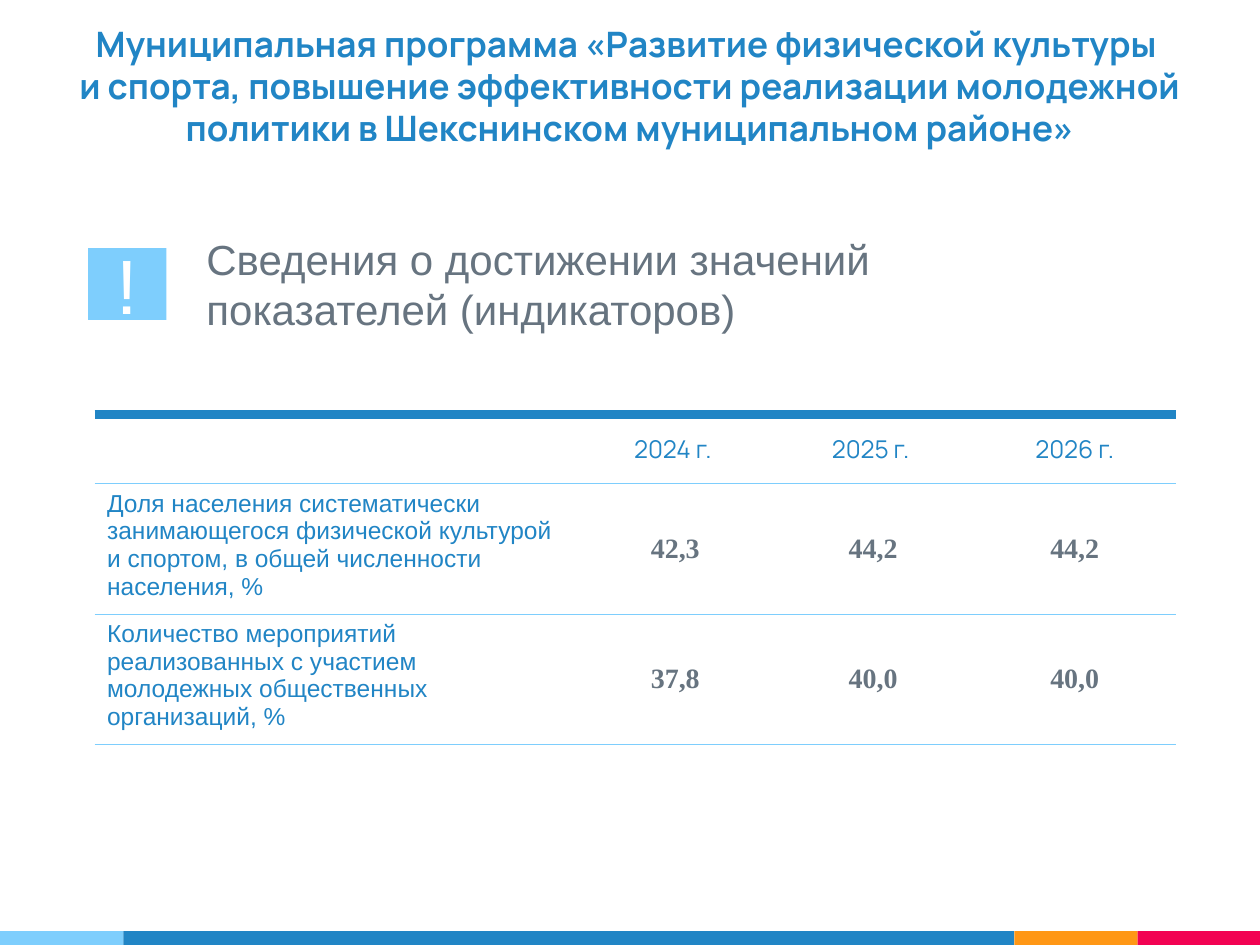
"""Build the slide on the sports and youth programme indicators."""
from lxml import etree
from pptx import Presentation
from pptx import util as u
from pptx.dml.color import RGBColor
from pptx.enum import shapes, text
from pptx.oxml.ns import qn

BLUE = RGBColor(0x21, 0x85, 0xC5)
SKY = RGBColor(0x7E, 0xCE, 0xFD)
ORANGE = RGBColor(0xFF, 0x97, 0x15)
RED = RGBColor(0xF2, 0x02, 0x53)
GRAY = RGBColor(0x67, 0x74, 0x80)
WHITE = RGBColor(0xFF, 0xFF, 0xFF)

TITLE = ("Муниципальная программа «Развитие физической культуры \n"
         "и спорта, повышение эффективности реализации молодежной "
         "политики в Шекснинском муниципальном районе»")
SUBTITLE = "Сведения о достижении значений показателей (индикаторов)"
ROWS = [
    ("", "2024 г. ", "2025 г. ", "2026 г."),
    ("Доля населения систематически занимающегося физической культурой "
     "и спортом, в общей численности населения, %", "42,3", "44,2", "44,2"),
    ("Количество мероприятий реализованных с участием молодежных "
     "общественных организаций, %", "37,8", "40,0", "40,0"),
]
COLUMN_WIDTHS = (3.84, 1.54, 1.6, 1.6)
ROW_HEIGHTS = (0.55, 0.98, 0.98)
FOOTER = [(SKY, 0.98), (BLUE, 7.07), (ORANGE, 0.98), (RED, 0.97)]
FOOTER_TOP, FOOTER_HEIGHT = 7.39, 0.11

HEADER_FORMAT = dict(font="Manrope", size=14, color=BLUE, align=text.PP_ALIGN.CENTER)
LABEL_FORMAT = dict(font="Arial", size=14, color=BLUE)
VALUE_FORMAT = dict(font="Times New Roman", size=16, color=GRAY, bold=True,
                    align=text.PP_ALIGN.CENTER)


def write(frame, content, font, size, color, bold=False, align=text.PP_ALIGN.LEFT):
    frame.word_wrap = True
    paragraph = frame.paragraphs[0]
    paragraph.text = content
    paragraph.alignment = align
    for run in paragraph.runs:
        run.font.name = font
        run.font.size = u.Pt(size)
        run.font.bold = bold
        run.font.color.rgb = color


def add_text(slide, box, content, anchor=text.MSO_ANCHOR.TOP, **style):
    frame = slide.shapes.add_textbox(*map(u.Inches, box)).text_frame
    frame.vertical_anchor = anchor
    write(frame, content, **style)
    return frame


def add_block(slide, box, color):
    shape = slide.shapes.add_shape(shapes.MSO_SHAPE.RECTANGLE, *map(u.Inches, box))
    shape.shadow.inherit = False
    shape.fill.solid()
    shape.fill.fore_color.rgb = color
    shape.line.fill.background()
    return shape


def set_borders(cell, top, bottom):
    properties = cell._tc.get_or_add_tcPr()
    borders = [("lnL", None), ("lnR", None), ("lnT", top), ("lnB", bottom)]
    for position, (name, border) in enumerate(borders):
        line = etree.Element(qn(f"a:{name}"))
        properties.insert(position, line)
        if border is None:
            etree.SubElement(line, qn("a:noFill"))
        else:
            color, width = border
            line.set("w", str(u.Pt(width)))
            fill = etree.SubElement(line, qn("a:solidFill"))
            etree.SubElement(fill, qn("a:srgbClr"), val=str(color))


def add_indicators(slide, left, top):
    table = slide.shapes.add_table(
        len(ROWS), len(COLUMN_WIDTHS), u.Inches(left), u.Inches(top),
        u.Inches(sum(COLUMN_WIDTHS)), u.Inches(sum(ROW_HEIGHTS))).table
    table.first_row = table.horz_banding = False
    for column, width in zip(table.columns, COLUMN_WIDTHS):
        column.width = u.Inches(width)
    thin, thick = (SKY, 0.75), (BLUE, 6)
    for i, (row, height) in enumerate(zip(ROWS, ROW_HEIGHTS)):
        table.rows[i].height = u.Inches(height)
        for j, content in enumerate(row):
            cell = table.cell(i, j)
            cell.fill.background()
            set_borders(cell, thin if i else thick, thin)
            if j:
                cell.vertical_anchor = text.MSO_ANCHOR.MIDDLE
            if content:
                style = HEADER_FORMAT if i == 0 else VALUE_FORMAT if j else LABEL_FORMAT
                write(cell.text_frame, content, **style)


def main():
    presentation = Presentation()
    presentation.slide_width, presentation.slide_height = u.Inches(10), u.Inches(7.5)
    slide = presentation.slides.add_slide(presentation.slide_layouts[6])

    left = 0
    for color, width in FOOTER:
        add_block(slide, (left, FOOTER_TOP, width, FOOTER_HEIGHT), color)
        left += width

    title = add_text(slide, (0, 0.08, 10, 1.2), TITLE, text.MSO_ANCHOR.BOTTOM,
                     font="Manrope", size=20, color=BLUE, bold=True,
                     align=text.PP_ALIGN.CENTER)
    title.margin_top = title.margin_bottom = u.Inches(0.1)
    add_indicators(slide, 0.75, 3.29)
    add_text(slide, (1.54, 1.8, 6.04, 0.91), SUBTITLE, font="Arial", size=24, color=GRAY)

    badge = add_block(slide, (0.7, 1.97, 0.62, 0.57), SKY).text_frame
    badge.vertical_anchor = text.MSO_ANCHOR.MIDDLE
    badge.margin_top = badge.margin_bottom = u.Inches(0.1)
    write(badge, "!", font="Arial", size=44, color=WHITE, align=text.PP_ALIGN.CENTER)

    presentation.save("out.pptx")


if __name__ == "__main__":
    main()
